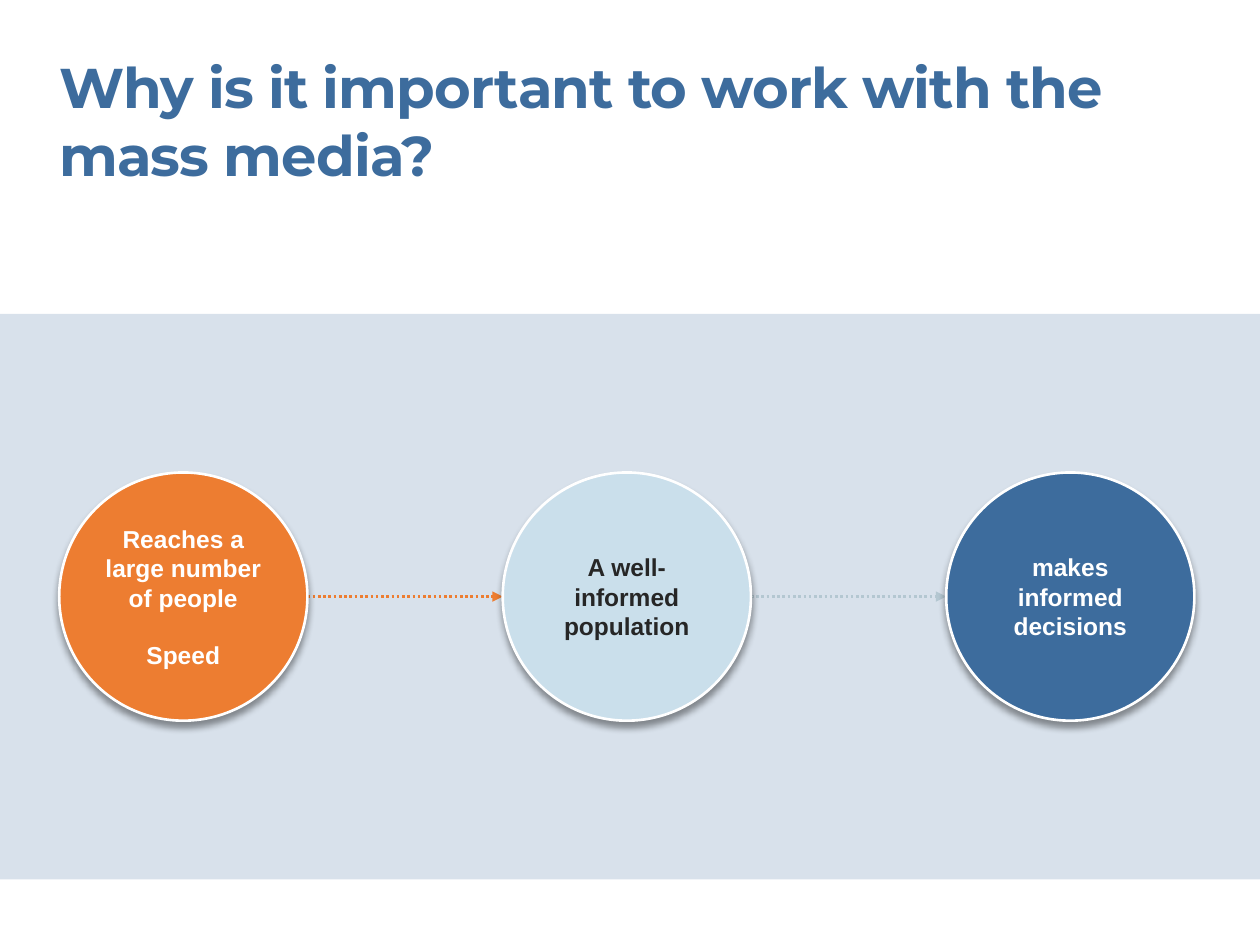
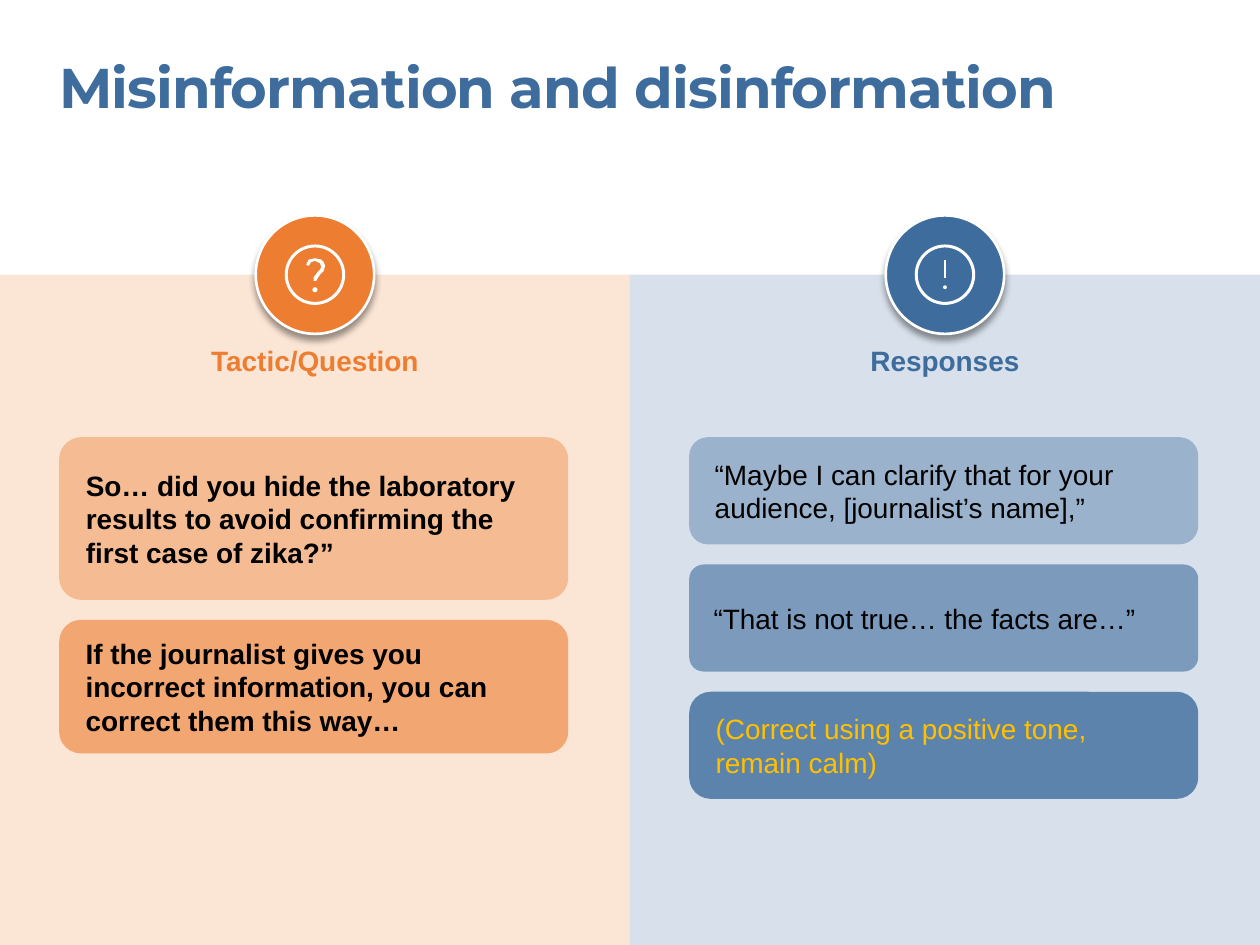
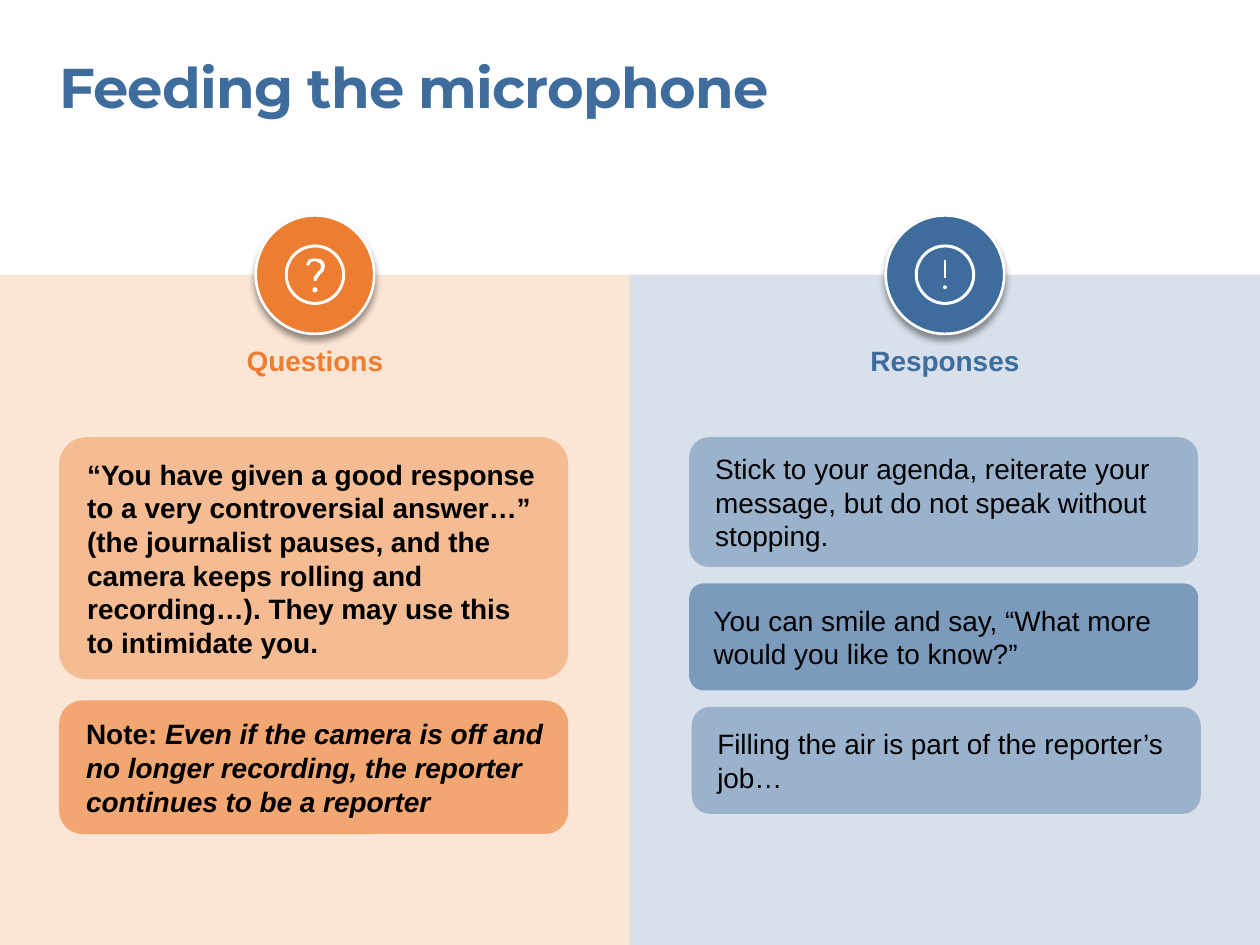
from collections import namedtuple

from lxml.etree import SubElement
from pptx import Presentation
from pptx.dml.color import RGBColor
from pptx.enum.dml import MSO_LINE
from pptx.enum.shapes import MSO_CONNECTOR, MSO_SHAPE
from pptx.enum.text import MSO_ANCHOR, PP_ALIGN
from pptx.oxml.ns import qn
from pptx.util import Inches, Pt

COLORS = {
    "blue": "3D6C9D",
    "orange": "ED7D31",
    "pale": "CADFEB",
    "grey": "B4C7D1",
    "white": "FFFFFF",
    "black": "000000",
    "dark": "262626",
    "yellow": "FFC000",
}
MARGIN = 0.47
CARD_WIDTH = 4.04
COLUMN_TOP = 2.18

Card = namedtuple("Card", "text height radius opacity color emphasis shift",
                  defaults=("black", "", 0))


def add_block(slide, kind, box, color, opacity=100, raised=False):
    """Add a filled shape; a raised one gets a white outline and a soft shadow."""
    block = slide.shapes.add_shape(kind, *map(Inches, box))
    block.shadow.inherit = False
    block.fill.solid()
    block.fill.fore_color.rgb = RGBColor.from_string(COLORS[color])
    properties = block.element.spPr
    if opacity < 100:
        fill_color = properties.find(qn("a:solidFill"))[0]
        SubElement(fill_color, qn("a:alpha"), val=str(opacity * 1000))
    if raised:
        block.line.color.rgb = RGBColor.from_string(COLORS["white"])
        block.line.width = Pt(1.5)
        shadow = SubElement(properties.find(qn("a:effectLst")), qn("a:outerShdw"),
                            blurRad=str(Pt(4)), dist=str(Pt(3)), dir="5400000",
                            algn="t", rotWithShape="0")
        shadow_color = SubElement(shadow, qn("a:srgbClr"), val=COLORS["black"])
        SubElement(shadow_color, qn("a:alpha"), val="40000")
    else:
        block.line.fill.background()
    return block


def write(shape, text, size, color, bold=True, font="Arial", align=PP_ALIGN.LEFT,
          anchor=MSO_ANCHOR.TOP, insets=(0, 0, 0, 0)):
    frame = shape.text_frame
    frame.text = text
    frame.word_wrap = True
    frame.vertical_anchor = anchor
    (frame.margin_left, frame.margin_top,
     frame.margin_right, frame.margin_bottom) = map(Inches, insets)
    for paragraph in frame.paragraphs:
        paragraph.alignment = align
        for run in paragraph.runs:
            run.font.size = Pt(size)
            run.font.name = font
            run.font.bold = bold
            run.font.color.rgb = RGBColor.from_string(COLORS[color])
    return frame


prs = Presentation()
prs.slide_width, prs.slide_height = Inches(10), Inches(7.5)

titles = [
    ("Why is it important to work with the mass media?", 8.38, 1.08),
    ("Misinformation and disinformation", 9.02, 0.54),
    ("Feeding the microphone", 9.02, 0.54),
]
slides = []
for title, width, height in titles:
    slide = prs.slides.add_slide(prs.slide_layouts[6])
    heading = slide.shapes.add_textbox(*map(Inches, (MARGIN, 0.42, width, height)))
    frame = write(heading, title, 32, "blue", font="Montserrat")
    frame.paragraphs[0].runs[0].font._element.set("spc", "-50")
    slides.append(slide)

# Slide 1: from reach to informed decisions
media_slide = slides[0]
add_block(media_slide, MSO_SHAPE.RECTANGLE, (0, 2.49, 10, 4.49), "blue", 20)

diameter, step, circle_top = 1.97, 3.52, 3.75
for index, color in enumerate(["orange", "grey"]):
    start = MARGIN + index * step + diameter
    middle = Inches(circle_top + diameter / 2)
    arrow = media_slide.shapes.add_connector(
        MSO_CONNECTOR.STRAIGHT, Inches(start), middle,
        Inches(start + step - diameter), middle)
    arrow.line.color.rgb = RGBColor.from_string(COLORS[color])
    arrow.line.width = Pt(1.5)
    arrow.line.dash_style = MSO_LINE.ROUND_DOT
    SubElement(arrow.line._get_or_add_ln(), qn("a:tailEnd"), type="triangle")
    SubElement(arrow.element.spPr, qn("a:effectLst"))

stages = [
    ("Reaches a large number of people\nSpeed", "orange", "white"),
    ("A well-informed population", "pale", "dark"),
    ("makes informed decisions", "blue", "white"),
]
for index, (text, color, text_color) in enumerate(stages):
    circle = add_block(media_slide, MSO_SHAPE.OVAL,
                       (MARGIN + index * step, circle_top, diameter, diameter),
                       color, raised=True)
    frame = write(circle, text, 14, text_color, align=PP_ALIGN.CENTER,
                  anchor=MSO_ANCHOR.MIDDLE)
    for paragraph in frame.paragraphs[1:]:
        paragraph.space_before = Pt(16)

# Slides 2 and 3: questions on the left, responses on the right
# Each mark: outline in hundredths of an inch from the badge centre, dot offset, dot size
question_mark = ([(-1, 5), (1, 5), (2, 3), (4, 0), (7, -3), (8, -7), (7, -10), (5, -12),
                  (0, -13), (-5, -12), (-7, -8), (-5, -7), (-3, -10), (0, -11), (4, -9),
                  (5, -6), (4, -4), (2, -2), (-1, 2)], 0.12, 0.04)
exclamation_mark = ([(-1, 3), (1, 3), (1, -12), (-1, -12)], 0.1, 0.03)
sides = [(0, "orange", question_mark, True), (5, "blue", exclamation_mark, False)]

# Per slide: for each side its heading, gap between cards and cards
comparisons = [
    [("Tactic/Question", 0.16, [
        Card("So… did you hide the laboratory results to avoid confirming the first "
             "case of zika?”", 1.29, 0.137, 40),
        Card("If the journalist gives you incorrect information, you can correct them "
             "this way…", 1.06, 0.163, 60)]),
     ("Responses", 0.16, [
         Card("“Maybe I can clarify that for your audience, [journalist’s name],”",
              0.85, 0.173, 40),
         Card("“That is not true… the facts are…”", 0.85, 0.136, 60),
         Card("(Correct using a positive tone, remain calm)", 0.85, 0.201, 80,
              color="yellow")])],
    [("Questions", 0.17, [
        Card("“You have given a good response to a very controversial answer…” (the "
             "journalist pauses, and the camera keeps rolling and recording…). They may "
             "use this to intimidate you.", 1.92, 0.112, 40),
        Card("Note: ", 1.06, 0.175, 60,
             emphasis="Even if the camera is off and no longer recording, the reporter "
                      "continues to be a reporter")]),
     ("Responses", 0.13, [
         Card("Stick to your agenda, reiterate your message, but do not speak without "
              "stopping.", 1.03, 0.153, 40),
         Card("You can smile and say, “What more would you like to know?”",
              0.85, 0.136, 60),
         Card("Filling the air is part of the reporter’s job…", 0.85, 0.173, 40,
              shift=0.02)])],
]
for slide, columns in zip(slides[1:], comparisons):
    for (left, color, mark, bold), (label, gap, cards) in zip(sides, columns):
        center = left + 2.5
        add_block(slide, MSO_SHAPE.RECTANGLE,
                  (left, COLUMN_TOP, 5, 7.5 - COLUMN_TOP), color, 20)
        add_block(slide, MSO_SHAPE.OVAL,
                  (center - 0.47, COLUMN_TOP - 0.47, 0.94, 0.94), color, raised=True)
        ring = add_block(slide, MSO_SHAPE.DONUT,
                         (center - 0.24, COLUMN_TOP - 0.24, 0.48, 0.48), "white")
        ring.adjustments[0] = 0.05

        outline, dot_offset, dot_size = mark
        builder = slide.shapes.build_freeform(*outline[0], scale=Inches(0.01))
        builder.add_line_segments(outline[1:], close=True)
        stroke = builder.convert_to_shape(Inches(center), Inches(COLUMN_TOP))
        stroke.shadow.inherit = False
        stroke.fill.solid()
        stroke.fill.fore_color.rgb = RGBColor.from_string(COLORS["white"])
        stroke.line.fill.background()
        add_block(slide, MSO_SHAPE.OVAL,
                  (center - dot_size / 2, COLUMN_TOP + dot_offset - dot_size / 2,
                   dot_size, dot_size), "white")

        heading = slide.shapes.add_textbox(*map(Inches, (left, 2.73, 5, 0.27)))
        write(heading, label, 16, color, align=PP_ALIGN.CENTER)

        top = 3.47
        for card in cards:
            panel = add_block(slide, MSO_SHAPE.ROUNDED_RECTANGLE,
                              (left + MARGIN + card.shift, top, CARD_WIDTH, card.height),
                              color, card.opacity)
            panel.adjustments[0] = card.radius
            right_inset = 0.12 if card.emphasis else 0.16
            frame = write(panel, card.text, 16, card.color, bold,
                          anchor=MSO_ANCHOR.MIDDLE,
                          insets=(0.16, 0.08, right_inset, 0.08))
            if card.emphasis:
                run = frame.paragraphs[0].add_run()
                run.text = card.emphasis
                run.font.size = Pt(16)
                run.font.name = "Arial"
                run.font.bold = run.font.italic = True
                run.font.color.rgb = RGBColor.from_string(COLORS[card.color])
            top += card.height + gap

prs.save("out.pptx")
